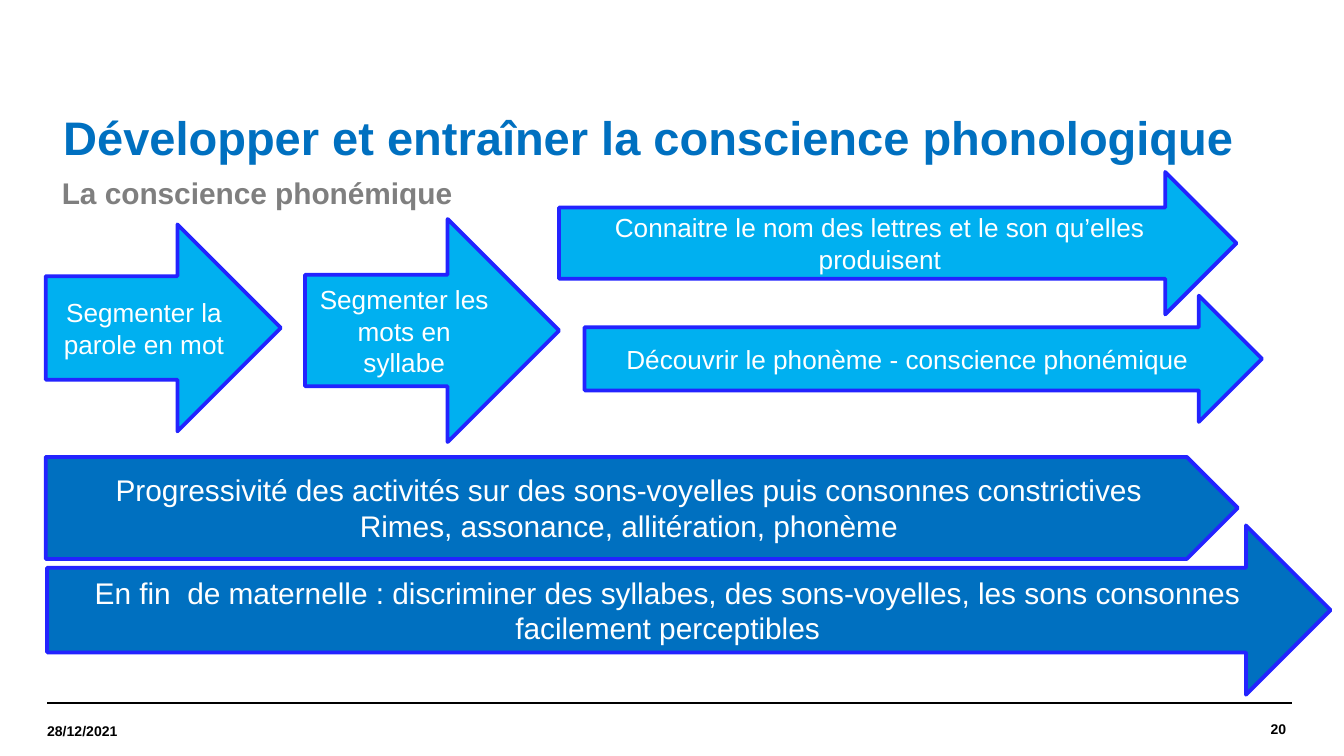
from pptx import Presentation
from pptx.dml.color import RGBColor
from pptx.enum.shapes import MSO_CONNECTOR, MSO_SHAPE
from pptx.enum.text import MSO_ANCHOR as ANCHOR, PP_ALIGN as ALIGN
from pptx.oxml.ns import qn
from pptx.util import Inches, Pt
from lxml.etree import SubElement

FONT = "Arial"
BLACK, WHITE, GREY = "000000", "FFFFFF", "7F7F7F"
SKY, BLUE, OUTLINE = "00B0F0", "0070C0", "2323FF"
ARROW, BANNER = MSO_SHAPE.RIGHT_ARROW, MSO_SHAPE.PENTAGON
INSETS = (0.1, 0.05, 0.1, 0.05)
NO_INSETS = (0, 0, 0, 0)

RULE_STARTS = (0.35, 0.39)
RULE_LENGTH, RULE_TOP = 9.22, 5.23

# text, box, size, colour, insets, anchor, alignment
LABELS = [
    ("20", (8.09, 5.23, 1.48, 0.39), 7.5, BLACK, NO_INSETS, ANCHOR.MIDDLE, ALIGN.RIGHT),
    ("28/12/2021", (0.35, 5.25, 1.28, 0.38), 7.5, BLACK, NO_INSETS, ANCHOR.MIDDLE, ALIGN.LEFT),
    ("La conscience phonémique", (0.35, 1.3, 9.21, 0.27), 16, GREY,
     (0.11, 0, 0, 0), ANCHOR.TOP, ALIGN.LEFT),
    ("Développer et entraîner la conscience phonologique", (0.35, 0.75, 9.21, 0.59), 25.2, BLUE,
     (0.12, 0.05, 0.1, 0.05), ANCHOR.MIDDLE, ALIGN.LEFT),
]

# text, preset, box, fill, size, insets
STEPS = [
    ("Segmenter la parole en mot", ARROW, (0.34, 1.67, 1.75, 1.54), SKY, 14, (0.1, 0, 0, 0)),
    ("Segmenter les mots en syllabe", ARROW, (2.27, 1.63, 1.89, 1.66), SKY, 14, INSETS),
    ("Connaitre le nom des lettres et le son qu’elles produisent", ARROW,
     (4.16, 1.28, 5.04, 1.06), SKY, 14, INSETS),
    ("Découvrir le phonème - conscience phonémique", ARROW,
     (4.35, 2.2, 5.04, 0.94), SKY, 14, INSETS),
    ("Progressivité des activités sur des sons-voyelles puis consonnes constrictives\n"
     "Rimes, assonance, allitération, phonème", BANNER,
     (0.34, 3.4, 8.87, 0.76), BLUE, 16, INSETS),
    ("En fin  de maternelle : discriminer des syllabes, des sons-voyelles, "
     "les sons consonnes facilement perceptibles", ARROW,
     (0.35, 3.91, 9.55, 1.26), BLUE, 16, INSETS),
]


def color(value):
    return RGBColor.from_string(value)


def write(shape, text, size, ink, insets, anchor, alignment, bold=False):
    frame = shape.text_frame
    frame.text = text
    frame.word_wrap = True
    frame.vertical_anchor = anchor
    (frame.margin_left, frame.margin_top,
     frame.margin_right, frame.margin_bottom) = map(Inches, insets)
    for paragraph in frame.paragraphs:
        paragraph.alignment = alignment
        for run in paragraph.runs:
            run.font.name = FONT
            run.font.size = Pt(size)
            run.font.bold = bold
            run.font.color.rgb = color(ink)


def add_footer_rule(slide, left):
    start, end, y = map(Inches, (left, left + RULE_LENGTH, RULE_TOP))
    rule = slide.shapes.add_connector(MSO_CONNECTOR.STRAIGHT, start, y, end, y)
    rule.line.color.rgb = color(BLACK)
    rule.line.width = Pt(0.8)
    SubElement(rule._element.spPr, qn("a:effectLst"))


def add_label(slide, text, box, size, ink, insets, anchor, alignment):
    label = slide.shapes.add_textbox(*map(Inches, box))
    write(label, text, size, ink, insets, anchor, alignment, bold=True)
    return label


def add_step(slide, text, preset, box, fill, size, insets):
    shape = slide.shapes.add_shape(preset, *map(Inches, box))
    shape.shadow.inherit = False
    shape.fill.solid()
    shape.fill.fore_color.rgb = color(fill)
    shape.line.color.rgb = color(OUTLINE)
    shape.line.width = Pt(2)
    write(shape, text, size, WHITE, insets, ANCHOR.MIDDLE, ALIGN.CENTER)


def main():
    presentation = Presentation()
    presentation.slide_width = Inches(10)
    presentation.slide_height = Inches(10 * 9 / 16)
    slide = presentation.slides.add_slide(presentation.slide_layouts[6])
    for left in RULE_STARTS:
        add_footer_rule(slide, left)
    for label in LABELS:
        title = add_label(slide, *label)
    title.text_frame.paragraphs[0].line_spacing = 0.9
    for step in STEPS:
        add_step(slide, *step)
    presentation.save("out.pptx")


if __name__ == "__main__":
    main()
